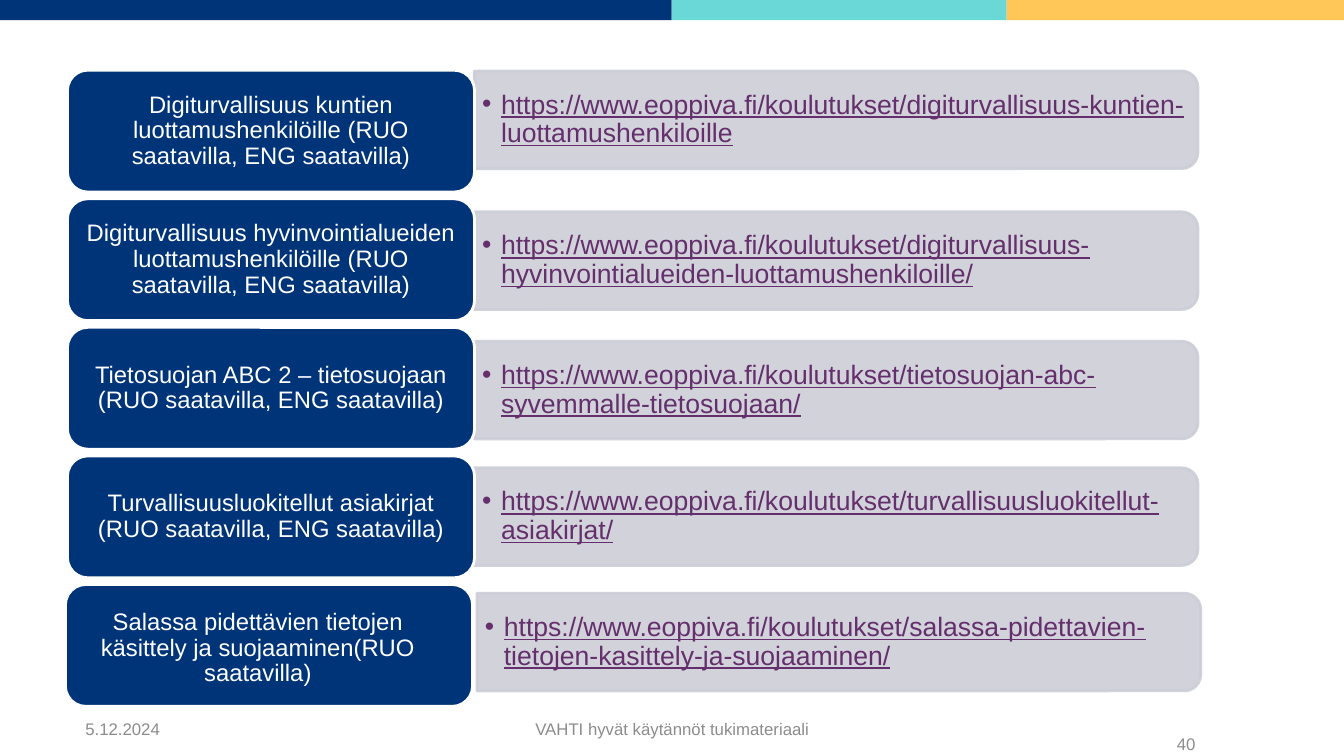
from lxml import etree
from pptx import Presentation
from pptx.dml.color import RGBColor
from pptx.enum import shapes, text
from pptx.oxml.ns import qn
from pptx.util import Cm, Pt

NAVY = RGBColor(0x00, 0x34, 0x79)
TEAL = RGBColor(0x69, 0xD8, 0xD7)
YELLOW = RGBColor(0xFF, 0xC6, 0x58)
PANEL_GREY = RGBColor(0xCC, 0xCE, 0xD7)
LINK_PURPLE = RGBColor(0x64, 0x2F, 0x6C)
FOOTER_GREY = RGBColor(0x8C, 0x8C, 0x8C)
WHITE = RGBColor(0xFF, 0xFF, 0xFF)
LEFT, CENTER, RIGHT = text.PP_ALIGN.LEFT, text.PP_ALIGN.CENTER, text.PP_ALIGN.RIGHT

# Content
BASE_URL = "https://www.eoppiva.fi/koulutukset/"
# Course title, end of its address, vertical centre of the address panel (cm)
COURSES = [
    ("Digiturvallisuus kuntien luottamushenkilöille (RUO saatavilla, ENG saatavilla)",
     "digiturvallisuus-kuntien-luottamushenkiloille", 3.02),
    ("Digiturvallisuus hyvinvointialueiden luottamushenkilöille (RUO saatavilla, ENG saatavilla)",
     "digiturvallisuus-hyvinvointialueiden-luottamushenkiloille/", 6.57),
    ("Tietosuojan ABC 2 – tietosuojaan (RUO saatavilla, ENG saatavilla)",
     "tietosuojan-abc-syvemmalle-tietosuojaan/", 9.83),
    ("Turvallisuusluokitellut asiakirjat (RUO saatavilla, ENG saatavilla)",
     "turvallisuusluokitellut-asiakirjat/", 13.02),
    ("Salassa pidettävien tietojen käsittely ja suojaaminen(RUO saatavilla)",
     "salassa-pidettavien-tietojen-kasittely-ja-suojaaminen/", 16.18),
]
# Left, width, colour (cm)
BANDS = [(0, 16.93, NAVY), (16.93, 8.44, TEAL), (25.37, 8.5, YELLOW)]
# Text, left, top, width (cm), alignment
FOOTERS = [
    ("5.12.2024", 1.9, 18.06, 4.2, LEFT),
    ("VAHTI hyvät käytännöt tukimateriaali", 8.87, 18.06, 16.15, CENTER),
    ("40", 28.07, 18.44, 2.31, RIGHT),
]

# Layout (cm)
CARD_LEFT, CARD_TOP, CARD_W, CARD_H, CARD_PITCH = 1.7, 1.77, 10.26, 3.07, 3.24
PANEL_LEFT, PANEL_W, PANEL_H = 11.95, 18.24, 2.46
LINK_W, LINK_H = 18.11, 2.24

prs = Presentation()
prs.slide_width, prs.slide_height = Cm(33.87), Cm(19.05)
slide = prs.slides.add_slide(prs.slide_layouts[6])


def add_block(kind, left, top, width, height, fill, line=None):
    block = slide.shapes.add_shape(kind, Cm(left), Cm(top), Cm(width), Cm(height))
    block.shadow.inherit = False
    block.fill.solid()
    block.fill.fore_color.rgb = fill
    if line is None:
        block.line.fill.background()
    else:
        block.line.color.rgb = line
        block.line.width = Pt(2)
    return block


def add_text_box(left, top, width, height):
    return slide.shapes.add_textbox(Cm(left), Cm(top), Cm(width), Cm(height)).text_frame


def write(frame, words, size, color, align, insets):
    frame.word_wrap = True
    frame.vertical_anchor = text.MSO_ANCHOR.MIDDLE
    (frame.margin_left, frame.margin_top,
     frame.margin_right, frame.margin_bottom) = map(Cm, insets)
    paragraph = frame.paragraphs[0]
    paragraph.alignment = align
    run = paragraph.add_run()
    run.text = words
    run.font.name, run.font.size = "Arial", Pt(size)
    run.font.color.rgb = color
    return paragraph, run


def set_opacity(block, percent):
    for color in block._element.spPr.iter(qn("a:srgbClr")):
        etree.SubElement(color, qn("a:alpha"), val=str(percent * 1000))


def add_bullet(paragraph, indent):
    props = paragraph._p.get_or_add_pPr()
    props.set("marL", str(Cm(indent)))
    props.set("indent", str(-Cm(indent)))
    bullet_color = etree.SubElement(props, qn("a:buClr"))
    etree.SubElement(bullet_color, qn("a:srgbClr"), val=str(LINK_PURPLE))
    etree.SubElement(props, qn("a:buFont"), typeface="Arial")
    etree.SubElement(props, qn("a:buChar"), char="•")


# Colour bands along the top
for left, width, color in BANDS:
    add_block(shapes.MSO_SHAPE.RECTANGLE, left, 0, width, 0.51, color)

# Course rows
for i, (title, address, panel_mid) in enumerate(COURSES):
    last = i == len(COURSES) - 1
    panel_left = PANEL_LEFT + (0.07 if last else 0)
    card_left = CARD_LEFT - (0.05 if last else 0)

    # The panel stands upright before its quarter turn
    panel = add_block(shapes.MSO_SHAPE.ROUND_2_SAME_RECTANGLE,
                      panel_left + (PANEL_W - PANEL_H) / 2, panel_mid - PANEL_W / 2,
                      PANEL_H, PANEL_W, PANEL_GREY, PANEL_GREY)
    panel.rotation = 90
    set_opacity(panel, 90)

    link = add_text_box(panel_left, panel_mid - LINK_H / 2, LINK_W, LINK_H)
    paragraph, run = write(link, BASE_URL + address, 19, LINK_PURPLE, LEFT,
                           (0.2, 0.1, 0.2, 0.1))
    paragraph.line_spacing = 0.9
    run.font.underline = True
    add_bullet(paragraph, 0.48)

    card = add_block(shapes.MSO_SHAPE.ROUNDED_RECTANGLE, card_left,
                     CARD_TOP + i * CARD_PITCH, CARD_W, CARD_H, NAVY, WHITE)
    insets = (0.18, 0.25, 0.74, 0.1) if last else (0.18, 0.1, 0.18, 0.1)
    paragraph, run = write(card.text_frame, title, 17, WHITE, CENTER, insets)
    paragraph.line_spacing = 0.9

# Footer
for words, left, top, width, align in FOOTERS:
    write(add_text_box(left, top, width, 0.61), words, 12, FOOTER_GREY, align,
          (0.25, 0.13, 0.25, 0.13))

prs.save("out.pptx")
